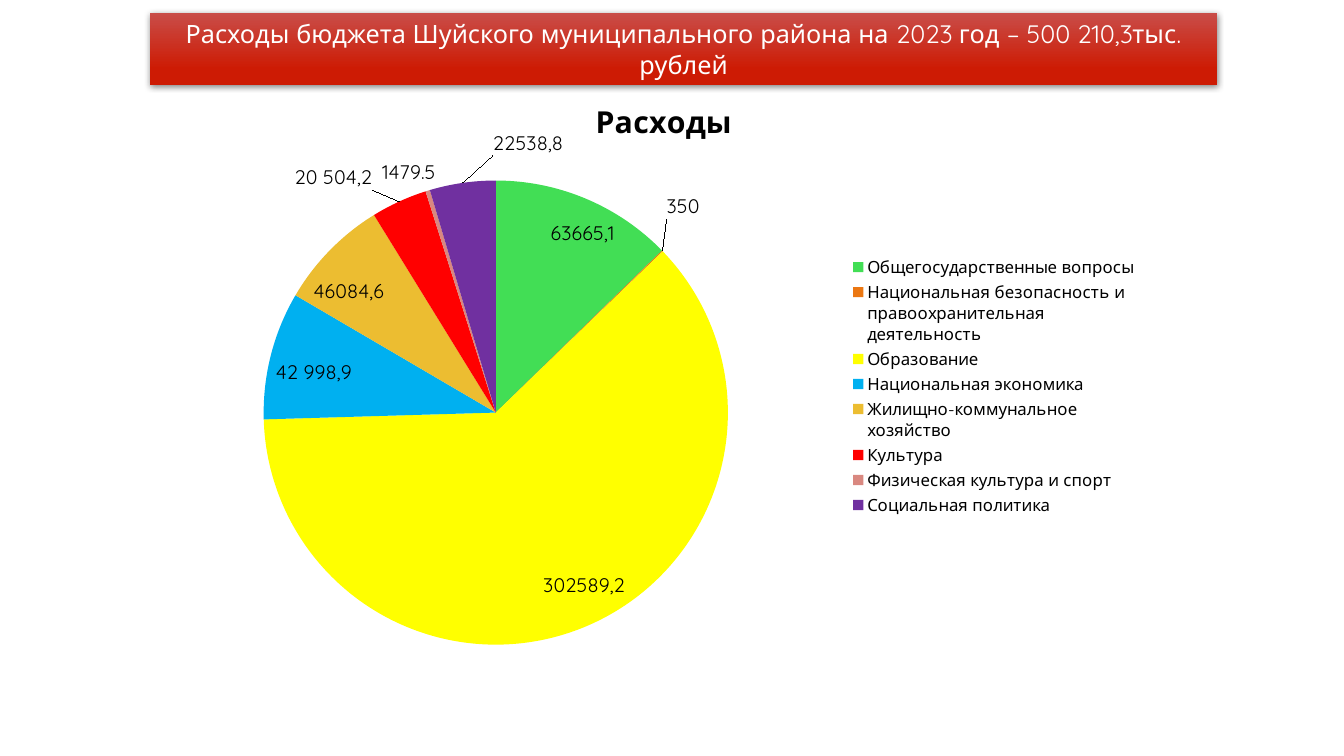
from lxml import etree
from pptx import Presentation
from pptx.chart.data import CategoryChartData
from pptx.dml.color import RGBColor
from pptx.enum import chart as ch, text as tx
from pptx.oxml import parse_xml
from pptx.oxml import ns
from pptx.util import Inches, Pt

# category, value, slice colour, label wording (None shows the value), label shift
EXPENSES = [
    ("Общегосударственные вопросы", 61281.2, "42DE55", "63665,1", None),
    ("Национальная безопасность и правоохранительная деятельность",
     350, "EB7712", None, (0, -0.045)),
    ("Образование", 297971.7, "FFFF00", "302589,2", None),
    ("Национальная экономика", 42958.9, "00B0F0", "42 998,9", None),
    ("Жилищно-коммунальное хозяйство", 37523.9, "ECBD31", "46084,6", None),
    ("Культура", 18814.4, "FF0000", "20 504,2", (-0.025, -0.01)),
    ("Физическая культура и спорт", 1479.5, "D98880", None, None),
    ("Социальная политика", 22108.2, "7030A0", "22538,8", (0.105, -0.035)),
]


def color(hex_value):
    return RGBColor.from_string(hex_value)


def format_font(font, size, hex_value="000000", bold=False, face="Quicksand"):
    font.name, font.size, font.bold = face, Pt(size), bold
    font.color.rgb = color(hex_value)


def write(frame, wording, align=tx.PP_ALIGN.CENTER, **font_format):
    """Put one formatted run into a text frame."""
    paragraph = frame.paragraphs[0]
    paragraph.alignment = align
    run = paragraph.add_run()
    run.text = wording
    format_font(run.font, **font_format)


def set_layout(parent, index, **settings):
    """Give a chart part a manual layout as its child at the index."""
    for old in parent.findall(ns.qn("c:layout")):
        parent.remove(old)
    layout = etree.Element(ns.qn("c:layout"))
    manual = etree.SubElement(layout, ns.qn("c:manualLayout"))
    for tag, value in settings.items():
        etree.SubElement(manual, ns.qn(f"c:{tag}")).set("val", str(value))
    parent.insert(index, layout)


class BudgetSlide:
    label_size = 14
    legend_size = 12

    def __init__(self, deck):
        self.slide = deck.slides.add_slide(deck.slide_layouts[5])

    def banner(self, wording, left, top, width, height):
        title = self.slide.shapes.title
        title.left, title.top = Inches(left), Inches(top)
        title.width, title.height = Inches(width), Inches(height)
        title.fill.gradient()
        title.fill.gradient_angle = 270
        for stop, (position, shade) in zip(
                title.fill.gradient_stops, [(0, "C94D48"), (0.78, "CD1B04")]):
            stop.position = position
            stop.color.rgb = color(shade)
        title._element.spPr.append(parse_xml(
            f'<a:effectLst {ns.nsdecls("a")}>'
            f'<a:outerShdw blurRad="{Pt(4.5)}" dist="{Pt(1.5)}" dir="5400000" rotWithShape="0">'
            '<a:srgbClr val="000000"><a:alpha val="48000"/></a:srgbClr>'
            '</a:outerShdw></a:effectLst>'))
        frame = title.text_frame
        frame.word_wrap = True
        frame.auto_size = tx.MSO_AUTO_SIZE.NONE
        frame.vertical_anchor = tx.MSO_ANCHOR.MIDDLE
        write(frame, wording, size=18, hex_value="FFFFFF")

    def pie(self, heading, rows, left, top, width, height):
        data = CategoryChartData()
        data.categories = [row[0] for row in rows]
        data.add_series(heading, [row[1] for row in rows])
        chart = self.slide.shapes.add_chart(
            ch.XL_CHART_TYPE.PIE, Inches(left), Inches(top),
            Inches(width), Inches(height), data).chart
        format_font(chart.font, 18)
        chart.has_title = True
        write(chart.chart_title.text_frame, heading, size=21.6, bold=True)
        chart.chart_title.include_in_layout = False

        chart.has_legend = True
        chart.legend.position = ch.XL_LEGEND_POSITION.RIGHT
        chart.legend.include_in_layout = False
        format_font(chart.legend.font, self.legend_size)

        plot = chart.plots[0]
        plot.vary_by_categories = True
        set_layout(plot._element.getparent(), 0, layoutTarget="inner",
                   xMode="edge", yMode="edge", x=0.05, y=0.168, w=0.553, h=0.75)
        expenses = plot.series[0]
        labels = expenses.data_labels
        labels.show_value = True
        labels.position = ch.XL_LABEL_POSITION.BEST_FIT
        format_font(labels.font, self.label_size)
        for index, (_, _, shade, wording, shift) in enumerate(rows):
            self.style_slice(expenses.points[index], shade, wording, shift)

    def style_slice(self, point, shade, wording, shift):
        point.format.fill.solid()
        point.format.fill.fore_color.rgb = color(shade)
        label = point.data_label
        if wording:
            write(label.text_frame, wording, size=self.label_size)
        else:
            format_font(label.font, self.label_size)
        label.position = ch.XL_LABEL_POSITION.BEST_FIT
        if shift:
            set_layout(label._get_or_add_dLbl(), 1, x=shift[0], y=shift[1])


def main():
    deck = Presentation()
    deck.slide_width, deck.slide_height = Inches(13.33), Inches(7.5)
    budget = BudgetSlide(deck)
    budget.banner("Расходы бюджета Шуйского муниципального района "
                  "на 2023 год – 500 210,3тыс. рублей", 1.49, 0.13, 10.58, 0.71)
    budget.pie("Расходы", EXPENSES, 1.78, 0.76, 9.61, 6.14)
    deck.save("out.pptx")


if __name__ == "__main__":
    main()
